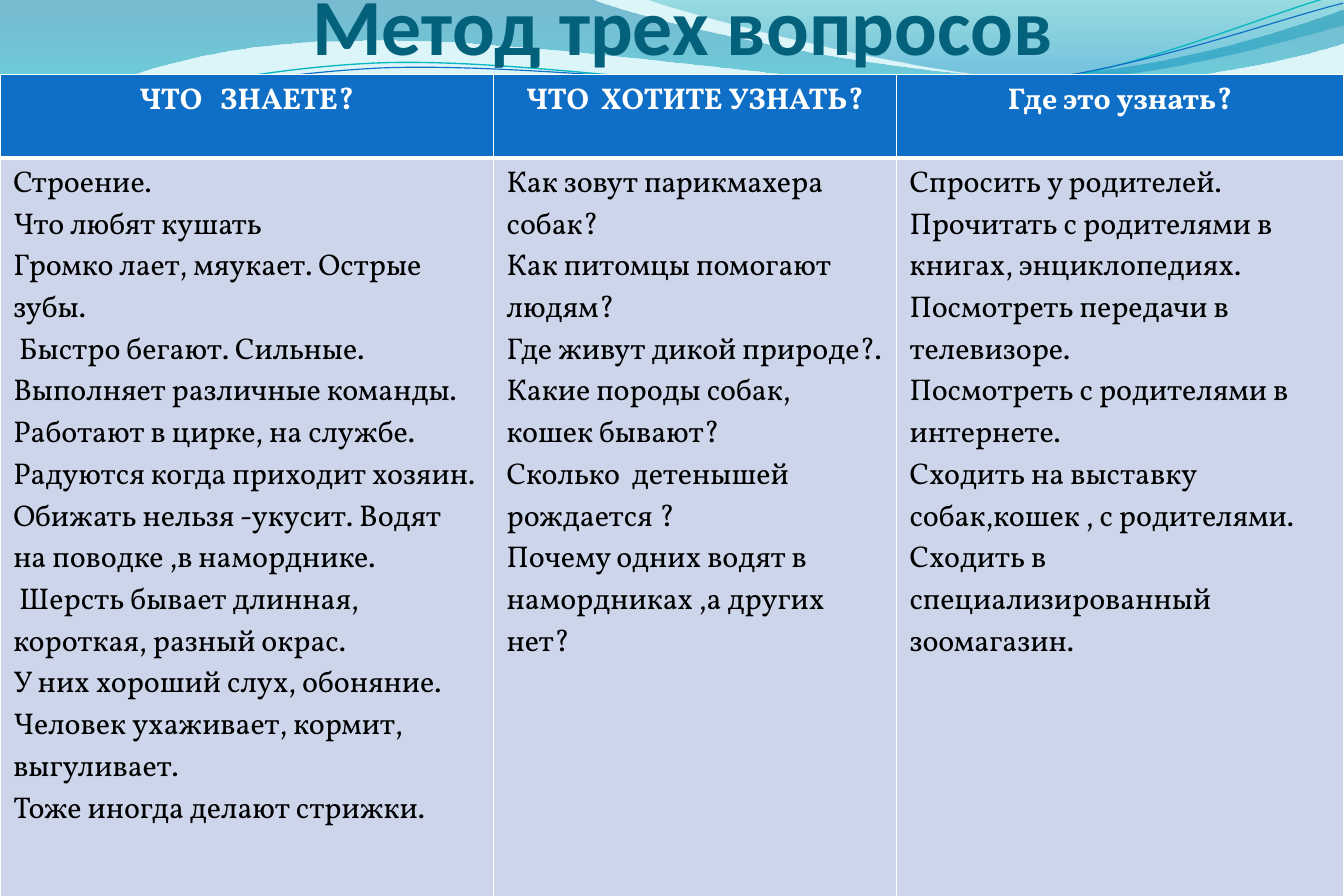
from lxml.etree import SubElement
from pptx import Presentation
from pptx.dml.color import RGBColor
from pptx.enum.text import MSO_ANCHOR, MSO_AUTO_SIZE, PP_ALIGN
from pptx.oxml.ns import qn
from pptx.util import Pt

PALE_AQUA = RGBColor(0xDB, 0xF5, 0xF9)
DEEP_TEAL = RGBColor(0x04, 0x61, 0x7B)
BLUE = RGBColor(0x0F, 0x6F, 0xC6)
TURQUOISE = RGBColor(0x0A, 0xB8, 0xBF)
LAVENDER = RGBColor(0xCC, 0xD5, 0xEA)
WHITE = RGBColor(0xFF, 0xFF, 0xFF)
BLACK = RGBColor(0, 0, 0)
WAVE_BLUE, WAVE_CYAN = RGBColor(0, 0x74, 0xA1), RGBColor(0, 0xC6, 0xCF)
CREST_GREEN, CREST_BLUE = RGBColor(0, 0xA1, 0xA9), RGBColor(0, 0x8B, 0xBF)

prs = Presentation()
prs.slide_width, prs.slide_height = Pt(850.5), Pt(567)
slide = prs.slides.add_slide(prs.slide_layouts[5])
slide.background.fill.solid()
slide.background.fill.fore_color.rgb = PALE_AQUA


def add_curve(start, segments, close):
    """Draw a path; a segment has one point (line) or three (Bézier curve)."""
    builder = slide.shapes.build_freeform(*start, scale=Pt(1))
    builder.add_line_segments([point for segment in segments for point in segment],
                              close=close)
    curve = builder.convert_to_shape()
    curve.shadow.inherit = False
    # Join the three lines of each curved segment into one Bézier element
    lines = iter(list(curve._element.iter(qn("a:lnTo"))))
    for segment in segments:
        first, *others = [next(lines) for _ in segment]
        if others:
            first.tag = qn("a:cubicBezTo")
        for other in others:
            first.append(other[0])
            other.getparent().remove(other)
    return curve


# Translucent waves along the top: start, segments, (position, colour, opacity)
waves = [
    ((0, 0),
     [[(374.4, -0.7)],
      [(404.6, 13), (564.5, 47.5), (645.1, 47.5)],
      [(725.8, 47.5), (815, 19.4), (850.5, 6.5)],
      [(851, 27.4)],
      [(836.6, 33.1), (739.4, 57.6), (634.3, 56.9)],
      [(529.2, 56.9), (324.7, 20.9), (218.9, 25.9)],
      [(108.7, 26.6), (38.9, 62.6), (-0.7, 85.7)]],
     [(0, WAVE_BLUE, 45), (1, WAVE_CYAN, 55)]),
    ((407.5, -0.7),
     [[(433.4, 8.6), (580.3, 46.8), (653.8, 49.7)],
      [(727.9, 51.8), (817.9, 24.5), (850.5, 15.8)],
      [(850.5, 0)]],
     [(0, CREST_GREEN, 30), (0.8, CREST_BLUE, 45)]),
]
for start, segments, stops in waves:
    wave = add_curve(start, segments, close=True)
    wave.line.fill.background()
    wave.fill.gradient()
    wave.fill.gradient_angle = 270
    for stop, (position, colour, opacity) in zip(wave.fill.gradient_stops, stops):
        stop.position = position
        stop.color.rgb = colour
    for srgb, (_, _, opacity) in zip(wave.fill._xPr.iter(qn("a:srgbClr")), stops):
        SubElement(srgb, qn("a:alpha"), val=str(opacity * 1000))

# Thin lines that follow the waves
ripples = [
    ((0, 86.4),
     [[(41, 72.7), (133.9, 44.6), (235.4, 40.3)],
      [(336.2, 35.3), (504, 67), (606.2, 59)],
      [(708.5, 51.8), (798.5, 9.4), (848.9, -3.6)]], TURQUOISE, 0.85),
    ((0, 80.6),
     [[(40.3, 74.2), (139, 47.5), (241.2, 43.2)],
      [(342.7, 38.9), (507.6, 62.6), (609.8, 56.2)],
      [(711.4, 49), (800.6, 13.7), (850.5, 2.2)]], BLUE, 0.75),
]
for start, segments, colour, width in ripples:
    ripple = add_curve(start, segments, close=False)
    ripple.fill.background()
    ripple.line.color.rgb = colour
    ripple.line.width = Pt(width)

# Title, in front of the waves
title = slide.shapes.title
slide.shapes._spTree.append(title._element)
title.left, title.top, title.width, title.height = Pt(28), Pt(0), Pt(808), Pt(45.5)
heading = title.text_frame
heading.auto_size = MSO_AUTO_SIZE.NONE
heading.word_wrap = True
heading.vertical_anchor = MSO_ANCHOR.BOTTOM
heading.margin_left = heading.margin_right = heading.margin_bottom = Pt(0)
heading.margin_top = Pt(4.3)
heading.paragraphs[0].alignment = PP_ALIGN.CENTER
run = heading.paragraphs[0].add_run()
run.text = "Метод трех вопросов"
run.font.name, run.font.size, run.font.bold = "Calibri", Pt(50.4), True
run.font.color.rgb = DEEP_TEAL

# Table of the three questions: heading, answers, column width
questions = [
    ("ЧТО   ЗНАЕТЕ?",
     ["Строение.",
      "Что любят кушать",
      "Громко лает, мяукает. Острые зубы.",
      " Быстро бегают. Сильные. Выполняет различные команды. "
      " Работают в цирке, на службе. Радуются когда приходит хозяин. "
      "Обижать нельзя -укусит. Водят на поводке ,в наморднике.",
      " Шерсть бывает длинная, короткая, разный окрас.",
      "У них хороший слух, обоняние. Человек ухаживает, кормит, выгуливает.",
      "Тоже иногда делают стрижки."], 312.25),
    ("ЧТО  ХОТИТЕ УЗНАТЬ?",
     ["Как зовут парикмахера собак?",
      "Как питомцы помогают людям?",
      "Где живут дикой природе?.",
      "Какие породы собак, кошек бывают?",
      "Сколько  детенышей рождается ?",
      "Почему одних водят в намордниках ,а других нет?"], 255),
    ("Где это узнать?",
     ["Спросить у родителей.",
      "Прочитать с родителями в книгах, энциклопедиях.",
      "Посмотреть передачи в телевизоре.",
      "Посмотреть с родителями в интернете.",
      "Сходить на выставку собак,кошек , с родителями.",
      "Сходить в специализированный  зоомагазин."], 283.25),
]
table = slide.shapes.add_table(2, 3, Pt(0), Pt(47.3), Pt(850.5), Pt(582)).table
table.rows[0].height, table.rows[1].height = Pt(52.7), Pt(529.3)


def fill_cell(cell, paragraphs, background, colour, bold, alignment, borders):
    cell.margin_left = cell.margin_right = Pt(8.4)
    cell.margin_top = cell.margin_bottom = Pt(3.8)
    for side, width in borders.items():
        border = SubElement(cell._tc.get_or_add_tcPr(), qn(f"a:ln{side}"), w=str(Pt(width)))
        paint = SubElement(border, qn("a:solidFill"))
        SubElement(paint, qn("a:srgbClr"), val=str(WHITE))
    cell.fill.solid()
    cell.fill.fore_color.rgb = background
    frame = cell.text_frame
    for index, text in enumerate(paragraphs):
        paragraph = frame.add_paragraph() if index else frame.paragraphs[0]
        paragraph.alignment = alignment
        run = paragraph.add_run()
        run.text = text
        run.font.name, run.font.size, run.font.bold = "Vollkorn", Pt(19), bold
        run.font.color.rgb = colour


for column, (question, answers, width) in enumerate(questions):
    table.columns[column].width = Pt(width)
    fill_cell(table.cell(0, column), [question], BLUE, WHITE, True,
              PP_ALIGN.CENTER, {"L": 1, "R": 1, "T": 1, "B": 3})
    fill_cell(table.cell(1, column), answers, LAVENDER, BLACK, False,
              PP_ALIGN.LEFT, {"L": 1, "R": 1, "T": 3, "B": 1})

prs.save("out.pptx")
